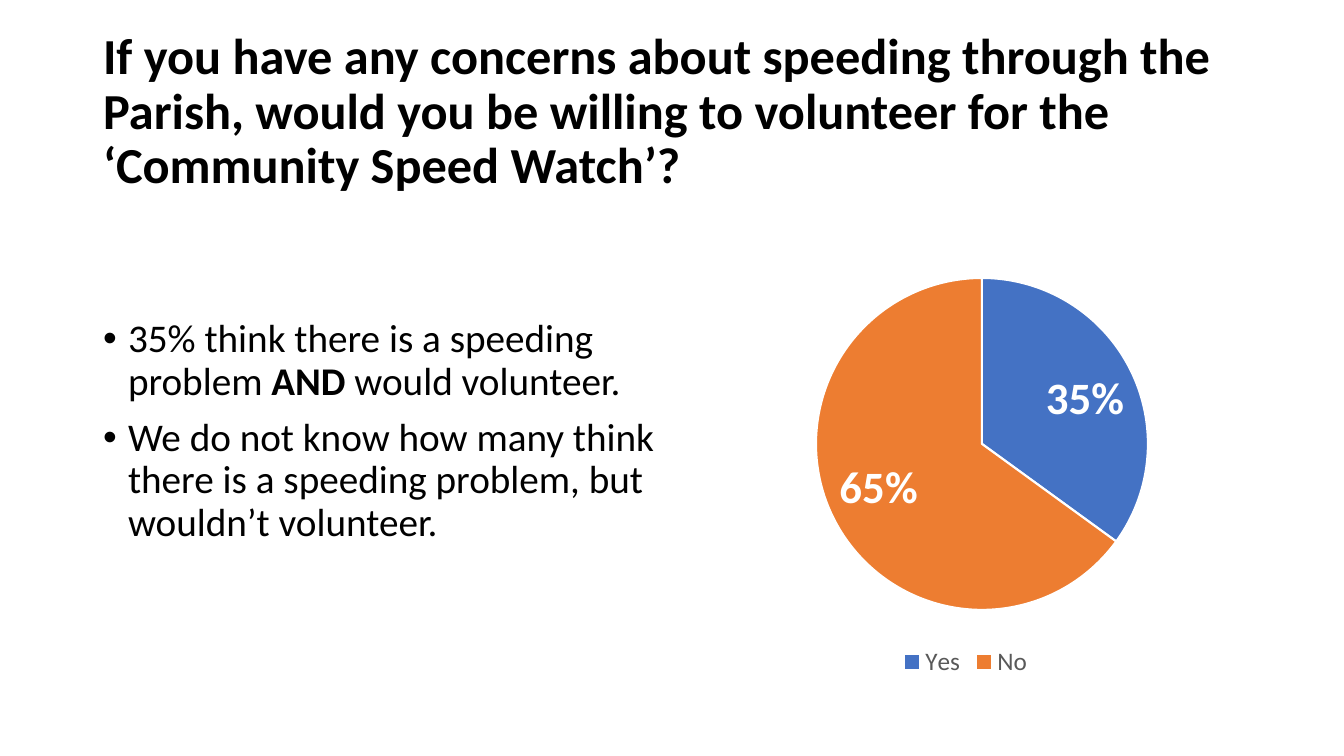
"""Build the Community Speed Watch survey slide."""
import pptx
import pptx.chart.data
import pptx.dml.color
import pptx.enum.chart
import pptx.enum.text
import pptx.util
import lxml.etree

TITLE = ("If you have any concerns about speeding through the Parish, "
         "would you be willing to volunteer for the ‘Community Speed Watch’?")
BULLETS = [
    [("35% think there is a speeding problem ", False), ("AND", True), (" would volunteer.", False)],
    [("We do not know how many think there is a speeding problem, but wouldn’t volunteer.", False)],
]
ANSWERS = [("Yes", 35, "4472C4"), ("No", 65, "ED7D31")]
FONT = "Calibri"
PAGE_SIZE = (1344, 756)
TITLE_AREA = (93, 40, 1159, 146)
BODY_AREA = (93, 202, 572, 480)
CHART_AREA = (680, 202, 572, 480)
PIE_AREA = (816, 278, 332, 332)
BODY_INSET = 117
BULLET_INDENT = 25


def px(length):
    return round(length * 914400 / 100.8)


def color(value):
    return pptx.dml.color.RGBColor.from_string(value)


def style_font(font, size, shade="000000", bold=False):
    font.name = FONT
    font.size = pptx.util.Pt(size)
    font.bold = bold
    font.color.rgb = color(shade)


def add_text(para, text, **style):
    span = para.add_run()
    span.text = text
    style_font(span.font, **style)


def place(box, area, anchor):
    box.left, box.top, box.width, box.height = map(px, area)
    frame = box.text_frame
    frame.word_wrap = True
    frame.auto_size = pptx.enum.text.MSO_AUTO_SIZE.NONE
    frame.vertical_anchor = anchor
    return frame


def add_title(page):
    frame = place(page.shapes.title, TITLE_AREA, pptx.enum.text.MSO_ANCHOR.MIDDLE)
    para = frame.paragraphs[0]
    para.alignment = pptx.enum.text.PP_ALIGN.LEFT
    para.line_spacing = 0.9
    add_text(para, TITLE, size=36, bold=True)


def add_bullets(page):
    frame = place(page.placeholders[1], BODY_AREA, pptx.enum.text.MSO_ANCHOR.TOP)
    frame.margin_top = px(BODY_INSET)
    for index, spans in enumerate(BULLETS):
        para = frame.add_paragraph() if index else frame.paragraphs[0]
        para.line_spacing = 0.9
        para.space_before = pptx.util.Pt(10 if index else 0)
        properties = para._p.get_or_add_pPr()
        properties.set("marL", str(px(BULLET_INDENT)))
        properties.set("indent", str(-px(BULLET_INDENT)))
        namespace = properties.nsmap["a"]
        lxml.etree.SubElement(properties, f"{{{namespace}}}buFont", typeface="Arial")
        lxml.etree.SubElement(properties, f"{{{namespace}}}buChar", char="•")
        for text, bold in spans:
            add_text(para, text, size=28, bold=bold)


def set_pie_layout(chart):
    plot_area = chart._chartSpace.chart.plotArea
    namespace = plot_area.nsmap["c"]
    for old in plot_area.findall(f"{{{namespace}}}layout"):
        plot_area.remove(old)
    layout = lxml.etree.Element(f"{{{namespace}}}layout")
    plot_area.insert(0, layout)
    manual = lxml.etree.SubElement(layout, f"{{{namespace}}}manualLayout")
    left, top, width, height = CHART_AREA
    pie_left, pie_top, pie_width, pie_height = PIE_AREA
    settings = [
        ("layoutTarget", "inner"), ("xMode", "edge"), ("yMode", "edge"),
        ("x", (pie_left - left) / width), ("y", (pie_top - top) / height),
        ("w", pie_width / width), ("h", pie_height / height),
    ]
    for name, value in settings:
        lxml.etree.SubElement(manual, f"{{{namespace}}}{name}", val=str(value))


def add_pie(page):
    data = pptx.chart.data.CategoryChartData()
    data.categories = [name for name, _, _ in ANSWERS]
    data.add_series("Series 1", [value for _, value, _ in ANSWERS])
    chart = page.shapes.add_chart(
        pptx.enum.chart.XL_CHART_TYPE.PIE, *map(px, CHART_AREA), data).chart
    style_font(chart.font, 10)
    chart.has_title = False
    chart.has_legend = True
    chart.legend.position = pptx.enum.chart.XL_LEGEND_POSITION.BOTTOM
    chart.legend.include_in_layout = False
    style_font(chart.legend.font, 18, "595959")
    plot = chart.plots[0]
    plot.vary_by_categories = True
    series = plot.series[0]
    for index, (_, _, shade) in enumerate(ANSWERS):
        slice_format = series.points[index].format
        slice_format.fill.solid()
        slice_format.fill.fore_color.rgb = color(shade)
        slice_format.line.color.rgb = color("FFFFFF")
        slice_format.line.width = pptx.util.Pt(1.5)
    labels = series.data_labels
    labels.show_percentage = True
    labels.show_value = False
    labels.number_format = "0%"
    labels.number_format_is_linked = False
    labels.position = pptx.enum.chart.XL_LABEL_POSITION.INSIDE_END
    style_font(labels.font, 32, "FFFFFF", True)
    set_pie_layout(chart)


def main():
    deck = pptx.Presentation()
    deck.slide_width, deck.slide_height = map(px, PAGE_SIZE)
    page = deck.slides.add_slide(deck.slide_layouts[1])
    add_title(page)
    add_bullets(page)
    add_pie(page)
    deck.save("out.pptx")


if __name__ == "__main__":
    main()
